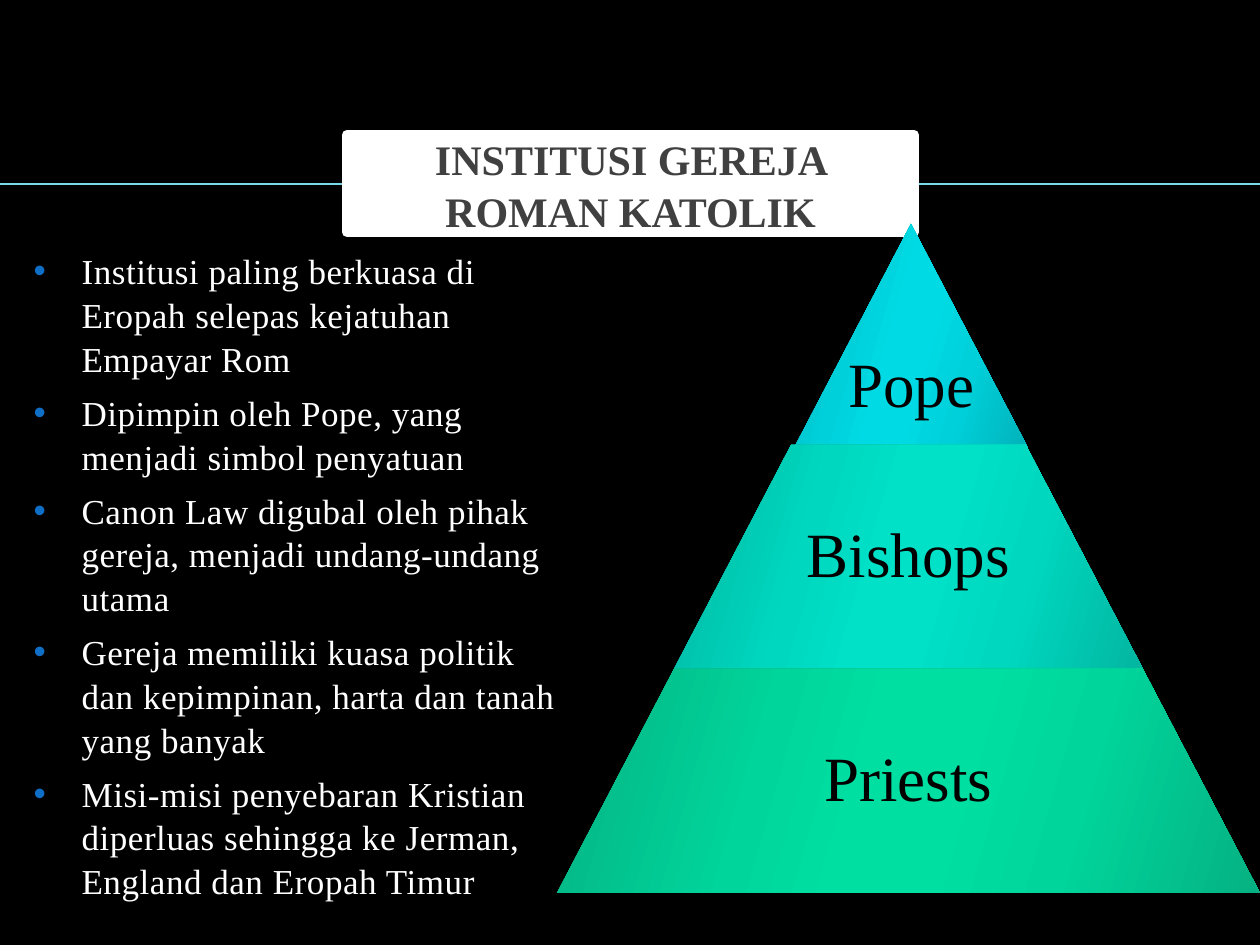
from lxml import etree
from pptx import Presentation
from pptx.dml.color import RGBColor
from pptx.enum.shapes import MSO_CONNECTOR, MSO_SHAPE
from pptx.enum.text import MSO_ANCHOR, MSO_AUTO_SIZE, PP_ALIGN
from pptx.oxml.ns import qn
from pptx.util import Emu, Pt

STRAIGHT = MSO_CONNECTOR.STRAIGHT
TRAPEZOID = MSO_SHAPE.TRAPEZOID
MIDDLE = MSO_ANCHOR.MIDDLE
TOP = MSO_ANCHOR.TOP
NO_AUTOFIT = MSO_AUTO_SIZE.NONE
CENTER = PP_ALIGN.CENTER
LEFT = PP_ALIGN.LEFT

EMU_PER_PX = 914400 / 126
FONT = "Times New Roman"
GRADIENT_STOPS = (0, 30, 45, 55, 73, 100)
GRADIENT_ANGLE = 16
TIER_HEIGHT = 224
HANGING_INDENT = 48

POINTS = (
    "Institusi paling berkuasa di Eropah selepas kejatuhan Empayar Rom",
    "Dipimpin oleh Pope, yang menjadi simbol penyatuan",
    "Canon Law digubal oleh pihak gereja, menjadi undang-undang utama",
    "Gereja memiliki kuasa politik dan kepimpinan, harta dan tanah yang banyak",
    "Misi-misi penyebaran Kristian diperluas sehingga ke Jerman, England dan Eropah Timur",
)
TIERS = (
    ("Pope", (794, 224, 234), (326, 122), ("01B2BA", "00D0DA", "00DAE4")),
    ("Bishops", (674, 445, 469), (445, 224), ("03B6A1", "00D7BF", "00E1C8")),
    ("Priests", (557, 669, 703), (669, 224), ("05B182", "00D59B", "00DFA2")),
)


def px(length):
    """Turn a length in px into EMU."""
    return Emu(round(length * EMU_PER_PX))


def colour(hex_string):
    """Turn a hex string into a colour."""
    return RGBColor.from_string(hex_string)


def place(shape, left, top, width, height):
    """Move and size a shape in px."""
    shape.left, shape.top = px(left), px(top)
    shape.width, shape.height = px(width), px(height)


def prepare_frame(shape, anchor):
    """Make the text of a shape wrap at a fixed size."""
    frame = shape.text_frame
    frame.word_wrap = True
    frame.auto_size = NO_AUTOFIT
    frame.vertical_anchor = anchor
    return frame


def add_run(paragraph, text, size, hex_string, bold=False):
    """Add one formatted run to a paragraph."""
    run = paragraph.add_run()
    run.text = text
    run.font.name = FONT
    run.font.size = Pt(size)
    run.font.bold = bold
    run.font.color.rgb = colour(hex_string)
    return run


def add_bullet(paragraph, hex_string):
    """Give a paragraph a coloured bullet and a hanging indent."""
    properties = paragraph._p.get_or_add_pPr()
    properties.set("marL", str(px(HANGING_INDENT)))
    properties.set("indent", str(-px(HANGING_INDENT)))
    bullet_colour = etree.SubElement(properties, qn("a:buClr"))
    etree.SubElement(bullet_colour, qn("a:srgbClr"), val=hex_string)
    etree.SubElement(properties, qn("a:buFont"), typeface="Arial")
    etree.SubElement(properties, qn("a:buChar"), char="•")


def fill_gradient(shape, edge, mid, core):
    """Fill a shape with a symmetric six-stop gradient."""
    shape.fill.gradient()
    gradient = shape.element.spPr.find(qn("a:gradFill"))
    for child in list(gradient):
        gradient.remove(child)
    stops = etree.SubElement(gradient, qn("a:gsLst"))
    for position, hex_string in zip(GRADIENT_STOPS, (edge, mid, core, core, mid, edge)):
        stop = etree.SubElement(stops, qn("a:gs"), pos=str(position * 1000))
        etree.SubElement(stop, qn("a:srgbClr"), val=hex_string)
    etree.SubElement(gradient, qn("a:lin"), ang=str(GRADIENT_ANGLE * 60000), scaled="0")


def add_rule(slide):
    """Draw the horizontal rule behind the title."""
    rule = slide.shapes.add_connector(STRAIGHT, px(0), px(184), px(1260), px(184))
    rule.line.color.rgb = colour("77D9E8")
    rule.line.width = Pt(1)
    etree.SubElement(rule.element.spPr, qn("a:effectLst"))
    slide.shapes.title.element.addprevious(rule.element)


def write_title(title):
    """Format the title as a white box with centred text."""
    place(title, 347, 135, 567, 97)
    title.fill.solid()
    title.fill.fore_color.rgb = colour("FFFFFF")
    title.line.color.rgb = colour("FFFFFF")
    title.line.width = Pt(6)
    paragraph = prepare_frame(title, MIDDLE).paragraphs[0]
    paragraph.alignment = CENTER
    paragraph.line_spacing = 1.04
    paragraph.space_before = Pt(4)
    add_run(paragraph, "INSTITUSI GEREJA ROMAN KATOLIK", 24, "404040", bold=True)


def write_points(body):
    """Fill the body with the bulleted points."""
    place(body, 21, 242, 554, 683)
    frame = prepare_frame(body, TOP)
    for index, text in enumerate(POINTS):
        paragraph = frame.add_paragraph() if index else frame.paragraphs[0]
        paragraph.alignment = LEFT
        paragraph.line_spacing = 1.04
        paragraph.space_before = Pt(6)
        add_bullet(paragraph, "0F6FC6")
        run = add_run(paragraph, text, 20, "FFFFFF")
        run.font._element.set("spc", "30")


def add_tier(slide, label, position, label_span, colours):
    """Add one level of the pyramid with its label."""
    left, top, width = position
    tier = slide.shapes.add_shape(TRAPEZOID, px(left), px(top), px(width), px(TIER_HEIGHT))
    tier.adjustments[0] = 0.523
    tier.shadow.inherit = False
    tier.line.fill.background()
    fill_gradient(tier, *colours)
    label_top, label_height = label_span
    box = slide.shapes.add_textbox(px(left), px(label_top), px(width), px(label_height))
    paragraph = prepare_frame(box, MIDDLE).paragraphs[0]
    paragraph.alignment = CENTER
    paragraph.line_spacing = 0.9
    add_run(paragraph, label, 36, "000000")


def main():
    """Build and save the slide."""
    presentation = Presentation()
    presentation.slide_width, presentation.slide_height = px(1260), px(945)
    slide = presentation.slides.add_slide(presentation.slide_layouts[1])
    slide.background.fill.solid()
    slide.background.fill.fore_color.rgb = colour("000000")
    add_rule(slide)
    write_title(slide.shapes.title)
    write_points(slide.placeholders[1])
    for tier in TIERS:
        add_tier(slide, *tier)
    presentation.save("out.pptx")


if __name__ == "__main__":
    main()
